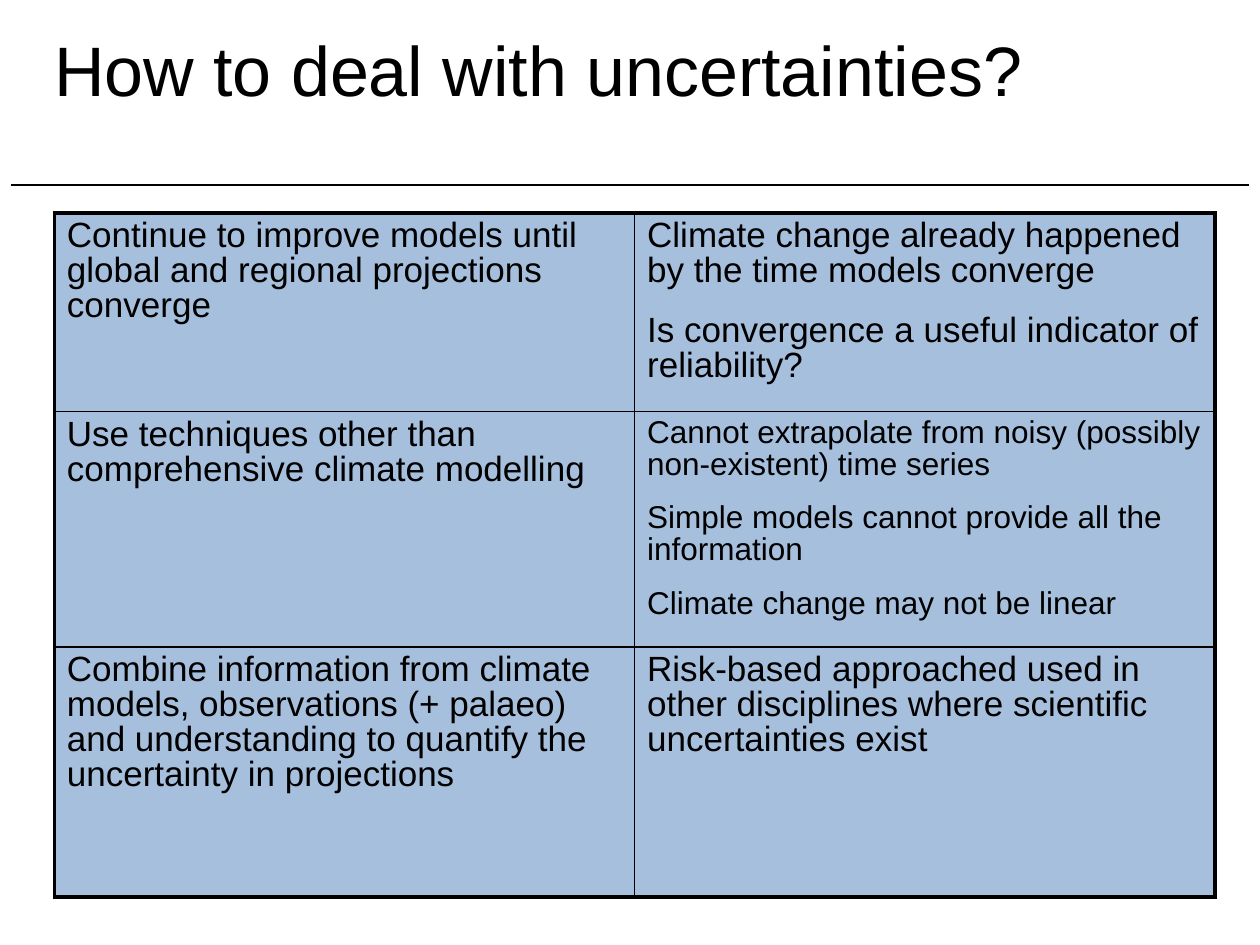
import pptx
import pptx.dml.color
import pptx.enum.shapes
import pptx.enum.text
import pptx.oxml
import pptx.oxml.ns
import pptx.util
from lxml import etree

Pt = pptx.util.Pt
COLOURS = {"ink": "000000", "rule": "000005", "cell": "4F81BD"}
OUTER, INNER = 2.25, 1
COLUMN_WIDTH = 331.6
ROW_HEIGHTS = [113.5, 134.5, 143]
SPACING = 0.35  # share of the text size, before and after a paragraph
# Each cell: text size, paragraphs
ROWS = [
    [(20, ["Continue to improve models until global and regional projections converge"]),
     (20, ["Climate change already happened by the time models converge",
           "Is convergence a useful indicator of reliability?"])],
    [(20, ["Use techniques other than comprehensive climate modelling"]),
     (18, ["Cannot extrapolate from noisy (possibly non-existent) time series",
           "Simple models cannot provide all the information",
           "Climate change may not be linear"])],
    [(20, ["Combine information from climate models, observations (+ palaeo) "
           "and understanding to quantify the uncertainty in projections"]),
     (20, ["Risk-based approached used in other disciplines where scientific "
           "uncertainties exist"])],
]


def colour(name):
    return pptx.dml.color.RGBColor.from_string(COLOURS[name])


def set_all(target, values):
    for name, value in values.items():
        setattr(target, name, value)


def write(para, text, size):
    span = para.add_run()
    span.text = text
    set_all(span.font, {"name": "Arial", "size": Pt(size)})
    span.font.color.rgb = colour("ink")


def add_title(page, text):
    box = page.shapes.add_textbox(Pt(31), Pt(-25.2), Pt(620), Pt(88.6))
    set_all(box.text_frame, {
        "word_wrap": True, "margin_left": 0, "margin_top": 0,
        "margin_right": 0, "margin_bottom": 0,
        "vertical_anchor": pptx.enum.text.MSO_ANCHOR.BOTTOM})
    write(box.text_frame.paragraphs[0], text, 40)


def add_rule(page, left, right, height):
    rule = page.shapes.add_connector(
        pptx.enum.shapes.MSO_CONNECTOR.STRAIGHT,
        Pt(left), Pt(height), Pt(right), Pt(height))
    rule.line.color.rgb = colour("rule")
    rule.line.width = Pt(0.75)
    etree.SubElement(rule.element.spPr, pptx.oxml.ns.qn("a:effectLst"))


def add_borders(cell, widths):
    """Draw cell borders; widths maps L, R, T and B, in that order, to points."""
    properties = cell._tc.get_or_add_tcPr()
    for side, width in widths.items():
        properties.append(pptx.oxml.parse_xml(
            f'<a:ln{side} {pptx.oxml.ns.nsdecls("a")} w="{int(Pt(width))}">'
            f'<a:solidFill><a:srgbClr val="{COLOURS["ink"]}"/></a:solidFill>'
            f'</a:ln{side}>'))


def fill_half_clear(cell, name):
    cell.fill.solid()
    cell.fill.fore_color.rgb = colour(name)
    shade = cell._tc.tcPr.find(pptx.oxml.ns.qn("a:solidFill"))[0]
    etree.SubElement(shade, pptx.oxml.ns.qn("a:alpha"), val="50000")


def write_cell(cell, size, texts):
    set_all(cell, {"margin_left": Pt(7.2), "margin_right": Pt(7.2),
                   "margin_top": Pt(3.6), "margin_bottom": Pt(3.6)})
    for index, text in enumerate(texts):
        frame = cell.text_frame
        para = frame.add_paragraph() if index else frame.paragraphs[0]
        gap = Pt(size * SPACING)
        set_all(para, {"line_spacing": 0.9, "space_after": gap,
                       "space_before": gap if index else Pt(0)})
        write(para, text, size)


def add_options_table(page):
    row_count, column_count = len(ROWS), len(ROWS[0])
    table = page.shapes.add_table(
        row_count, column_count, Pt(31), Pt(121.7),
        Pt(COLUMN_WIDTH * column_count), Pt(sum(ROW_HEIGHTS))).table
    set_all(table, {"first_row": False, "horz_banding": False})
    for column in table.columns:
        column.width = Pt(COLUMN_WIDTH)
    for r, cells in enumerate(ROWS):
        table.rows[r].height = Pt(ROW_HEIGHTS[r])
        for c, (size, texts) in enumerate(cells):
            cell = table.cell(r, c)
            at_edge = {"L": c == 0, "R": c == column_count - 1,
                       "T": r == 0, "B": r == row_count - 1}
            add_borders(cell, {side: OUTER if edge else INNER
                               for side, edge in at_edge.items()})
            fill_half_clear(cell, "cell")
            write_cell(cell, size, texts)


def main():
    deck = pptx.Presentation()
    set_all(deck, {"slide_width": Pt(720), "slide_height": Pt(540)})
    page = deck.slides.add_slide(deck.slide_layouts[6])
    add_rule(page, 6.5, 713.5, 105.8)
    add_title(page, "How to deal with uncertainties?")
    add_options_table(page)
    deck.save("out.pptx")


if __name__ == "__main__":
    main()
